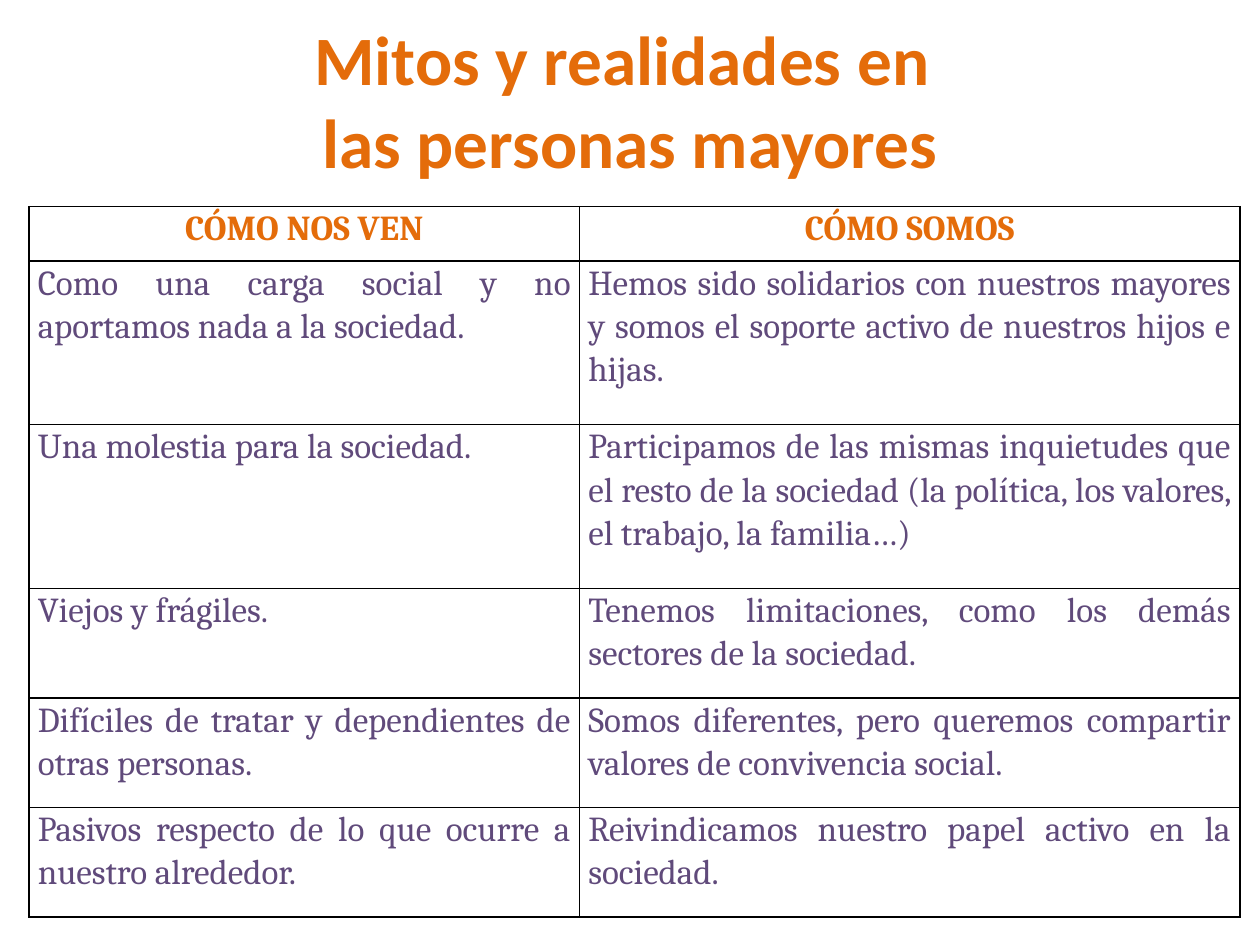
"""Build a slide contrasting myths and realities about older people."""
from lxml.etree import SubElement
from pptx import Presentation
from pptx.dml.color import RGBColor
from pptx.enum.text import MSO_ANCHOR, PP_ALIGN
from pptx.oxml.ns import qn
from pptx.util import Inches, Pt

ORANGE = RGBColor(0xE4, 0x6C, 0x0A)
PURPLE = RGBColor(0x60, 0x4A, 0x7B)
BLACK = RGBColor(0x00, 0x00, 0x00)

TITLE = "Mitos y realidades en \vlas personas mayores"
ROWS = [
    ("CÓMO NOS VEN", "CÓMO SOMOS"),
    ("Como una carga social y no aportamos nada a la sociedad.",
     "Hemos sido solidarios con nuestros mayores y somos el soporte activo "
     "de nuestros hijos e hijas."),
    ("Una molestia para la sociedad.",
     "Participamos de las mismas inquietudes que el resto de la sociedad "
     "(la política, los valores, el trabajo, la familia…)"),
    ("Viejos y frágiles.",
     "Tenemos limitaciones, como los demás sectores de la sociedad."),
    ("Difíciles de tratar y dependientes de otras personas.",
     "Somos diferentes, pero queremos compartir valores de convivencia social."),
    ("Pasivos respecto de lo que ocurre a nuestro alrededor.",
     "Reivindicamos nuestro papel activo en la sociedad."),
]
COL_WIDTHS = [4.37, 5.24]
ROW_HEIGHTS = [0.43, 1.3, 1.3, 0.87, 0.87, 0.87]

TITLE_FONT = {"name": "Calibri", "size": Pt(39.6), "bold": True}
HEAD_FONT = {"name": "Cambria", "size": Pt(20), "bold": True}
BODY_FONT = {**HEAD_FONT, "bold": False}
CELL_FORMAT = {"margin_left": Inches(0.07), "margin_right": Inches(0.07),
               "margin_top": 0, "margin_bottom": 0,
               "vertical_anchor": MSO_ANCHOR.TOP}


def set_all(obj, values):
    for name, value in values.items():
        setattr(obj, name, value)


def style_text(p, font, color, align):
    p.alignment = align
    set_all(p.font, font)
    p.font.color.rgb = color
    for r in p.runs:
        set_all(r.font, font)
        r.font.color.rgb = color


def add_borders(cell):
    tc_pr = cell._tc.get_or_add_tcPr()
    for side in ("lnL", "lnR", "lnT", "lnB"):
        ln = SubElement(tc_pr, qn(f"a:{side}"), w=str(Pt(1)))
        fill = SubElement(ln, qn("a:solidFill"))
        SubElement(fill, qn("a:srgbClr"), val=str(BLACK))


def add_title(s):
    box = s.shapes.add_textbox(Inches(0.5), Inches(0.16), Inches(9), Inches(1.25))
    tf = box.text_frame
    set_all(tf, {"word_wrap": True, "vertical_anchor": MSO_ANCHOR.MIDDLE})
    p = tf.paragraphs[0]
    p.text = TITLE
    style_text(p, TITLE_FONT, ORANGE, PP_ALIGN.CENTER)


def add_comparison(s):
    table = s.shapes.add_table(
        len(ROWS), len(COL_WIDTHS), Inches(0.23), Inches(1.64),
        Inches(sum(COL_WIDTHS)), Inches(sum(ROW_HEIGHTS))).table
    set_all(table, {"first_row": True, "horz_banding": False})
    for col, width in zip(table.columns, COL_WIDTHS):
        col.width = Inches(width)
    for i, (row, height, texts) in enumerate(zip(table.rows, ROW_HEIGHTS, ROWS)):
        row.height = Inches(height)
        look = ((HEAD_FONT, ORANGE, PP_ALIGN.CENTER) if i == 0
                else (BODY_FONT, PURPLE, PP_ALIGN.JUSTIFY))
        for cell, text in zip(row.cells, texts):
            set_all(cell, CELL_FORMAT)
            add_borders(cell)
            cell.fill.background()
            p = cell.text_frame.paragraphs[0]
            p.text = text
            p.line_spacing = 1.07
            style_text(p, *look)


def main():
    prs = Presentation()
    set_all(prs, {"slide_width": Inches(10), "slide_height": Inches(7.5)})
    s = prs.slides.add_slide(prs.slide_layouts[6])
    add_title(s)
    add_comparison(s)
    prs.save("out.pptx")


if __name__ == "__main__":
    main()
